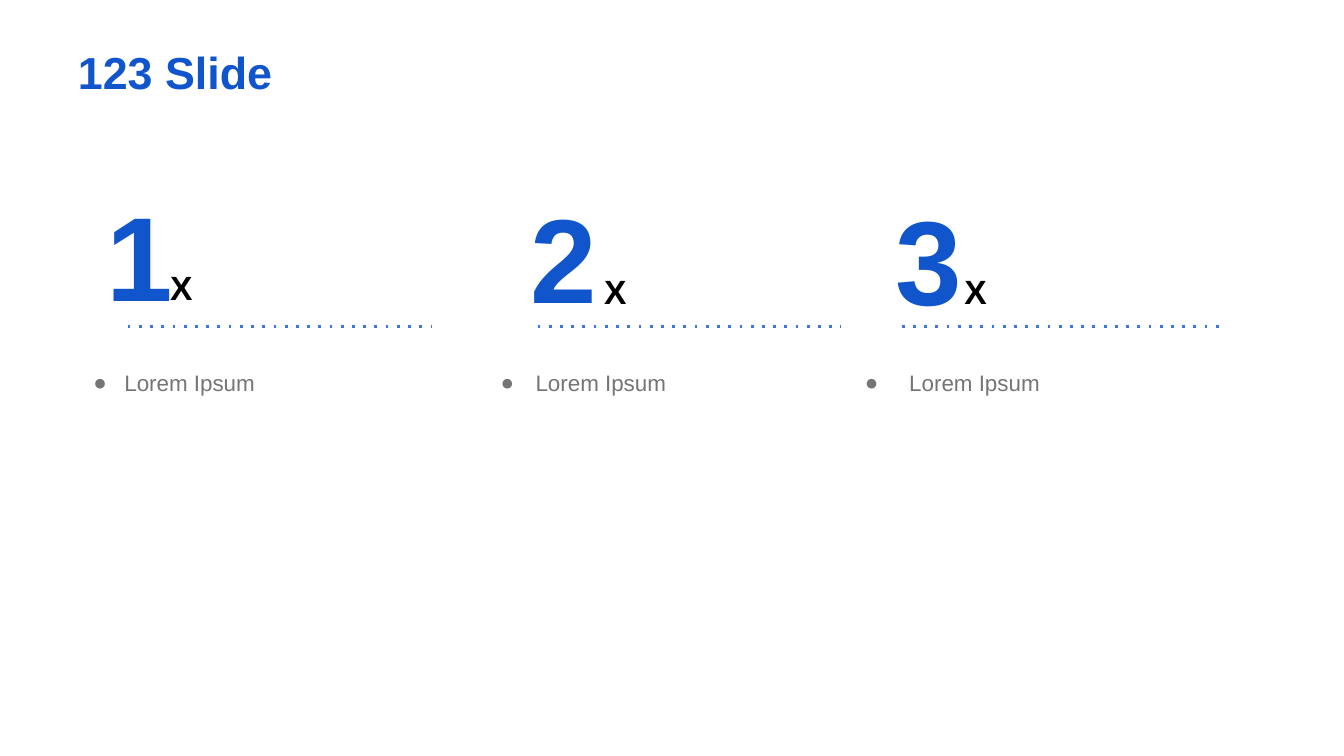
from lxml import etree
from pptx import Presentation
from pptx import util as u
from pptx.dml.color import RGBColor
from pptx.enum import dml, shapes, text
from pptx.oxml.ns import qn

COLORS = {"blue": "1155CC", "dots": "3C78D8", "black": "000000", "gray": "757575"}
FONT = "Arial"
SLIDE_WIDTH = u.Inches(10)
SLIDE_HEIGHT = SLIDE_WIDTH * 9 // 16
LABEL_INSET = u.Pt(5.4)
RULE_Y = 2.43
BULLET_Y = 2.57

# Each column: digit and unit (left, top), unit width, rule (start, end),
# bullet (left, width, text indent, hanging indent)
COLUMNS = [
    {"digit": ("1", 0.79, 1.44), "unit": (1.19, 1.91, 2.93),
     "rule": (0.95, 3.21), "bullet": (0.45, 3.08, 0.4, 0.23)},
    {"digit": ("2", 3.95, 1.46), "unit": (4.42, 1.94, 2.49),
     "rule": (4.0, 6.26), "bullet": (3.53, 2.93, 0.38, 0.26)},
    {"digit": ("3", 6.66, 1.47), "unit": (7.1, 1.94, 2.49),
     "rule": (6.71, 9.13), "bullet": (6.19, 3.23, 0.5, 0.33)},
]


def place(shape, left, top, width, height):
    shape.left, shape.top = u.Inches(left), u.Inches(top)
    shape.width, shape.height = u.Inches(width), u.Inches(height)


def write(shape, words, size, color, bold=False, inset=LABEL_INSET,
          anchor=text.MSO_ANCHOR.TOP, spacing=None):
    """Fill a shape with one formatted paragraph and return the paragraph."""
    frame = shape.text_frame
    frame.text = words
    frame.word_wrap = True
    frame.auto_size = text.MSO_AUTO_SIZE.NONE
    frame.vertical_anchor = anchor
    frame.margin_left = frame.margin_right = inset
    frame.margin_top = frame.margin_bottom = inset
    paragraph = frame.paragraphs[0]
    paragraph.alignment = text.PP_ALIGN.LEFT
    if spacing:
        paragraph.line_spacing = spacing
    font = paragraph.runs[0].font
    font.name, font.size, font.bold = FONT, u.Pt(size), bold
    font.color.rgb = RGBColor.from_string(COLORS[color])
    return paragraph


def add_label(slide, box, words, size, color, **style):
    label = slide.shapes.add_textbox(0, 0, 0, 0)
    place(label, *box)
    return write(label, words, size, color, **style)


def add_bullet(paragraph, indent, hanging, color):
    props = paragraph._p.get_or_add_pPr()
    props.set("marL", str(u.Inches(indent)))
    props.set("indent", str(-u.Inches(hanging)))
    bullet_color = etree.SubElement(props, qn("a:buClr"))
    etree.SubElement(bullet_color, qn("a:srgbClr"), val=COLORS[color])
    etree.SubElement(props, qn("a:buFont"), typeface=FONT)
    etree.SubElement(props, qn("a:buChar"), char="●")


def add_dotted_rule(slide, start, end):
    rule = slide.shapes.add_connector(
        shapes.MSO_CONNECTOR.STRAIGHT, u.Inches(start), u.Inches(RULE_Y),
        u.Inches(end), u.Inches(RULE_Y))
    rule.line.color.rgb = RGBColor.from_string(COLORS["dots"])
    rule.line.width = u.Pt(1.5)
    rule.line.dash_style = dml.MSO_LINE.ROUND_DOT
    props = rule._element.spPr
    # The plain "dot" preset has wider gaps than ROUND_DOT
    props.find(".//" + qn("a:prstDash")).set("val", "dot")
    etree.SubElement(props, qn("a:effectLst"))


def add_column(slide, column):
    left, top, width = column["unit"]
    add_label(slide, (left, top, width, 0.45), "X", 18, "black", bold=True)
    digit, left, top = column["digit"]
    add_label(slide, (left, top, 0.62, 1), digit, 64, "blue", bold=True,
              inset=0, anchor=text.MSO_ANCHOR.BOTTOM, spacing=0.93)
    add_dotted_rule(slide, *column["rule"])
    left, width, indent, hanging = column["bullet"]
    item = add_label(slide, (left, BULLET_Y, width, 0.35), "Lorem Ipsum",
                     12, "gray", spacing=1.5)
    add_bullet(item, indent, hanging, "gray")


def main():
    deck = Presentation()
    deck.slide_width, deck.slide_height = SLIDE_WIDTH, SLIDE_HEIGHT
    slide = deck.slides.add_slide(deck.slide_layouts[5])
    title = slide.shapes.title
    place(title, 0.48, 0.23, 7.14, 0.47)
    write(title, "123 Slide", 24, "blue", bold=True, inset=u.Inches(0.1))
    for column in COLUMNS:
        add_column(slide, column)
    deck.save("out.pptx")


if __name__ == "__main__":
    main()
